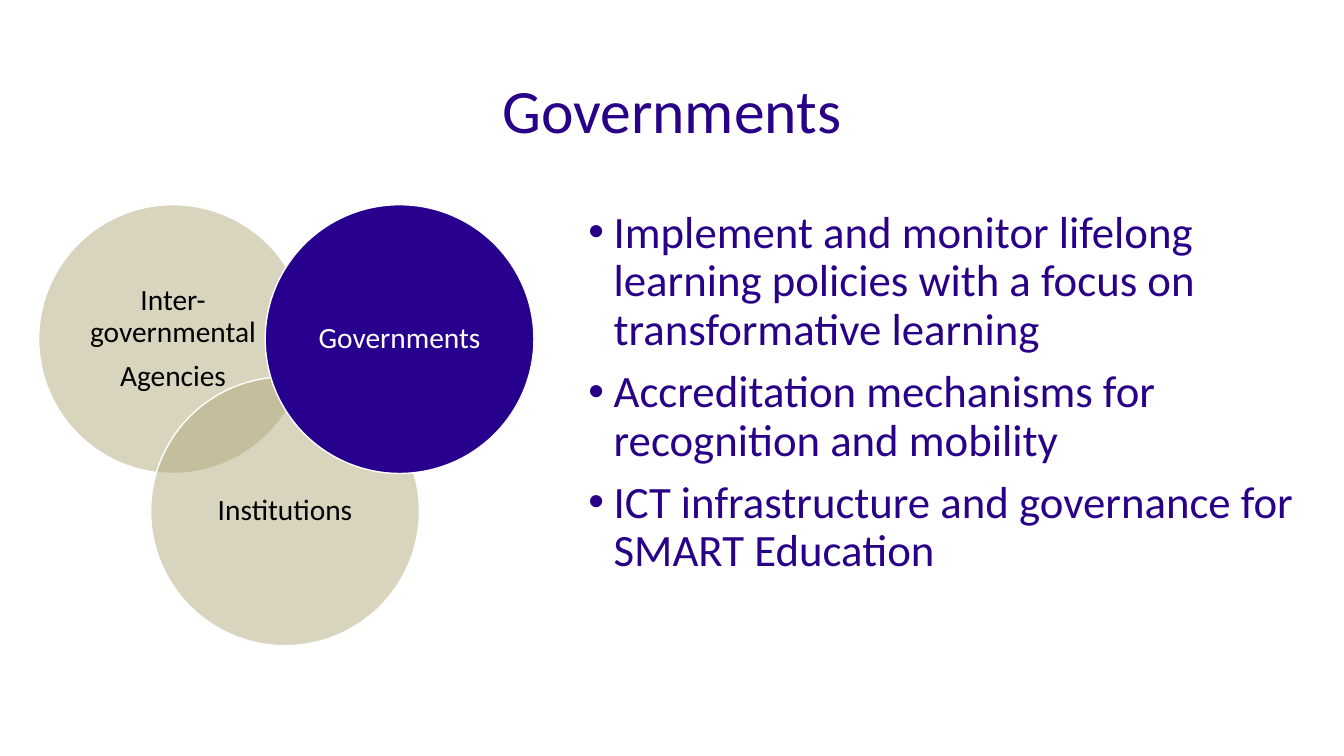
import pptx
import pptx.dml.color
import pptx.enum.shapes
import pptx.enum.text
import pptx.util
from lxml import etree
from pptx.oxml.ns import qn

Pt = pptx.util.Pt
INDIGO = pptx.dml.color.RGBColor(0x29, 0x00, 0x88)
DEEP_INDIGO = pptx.dml.color.RGBColor(0x27, 0x01, 0x8E)
SAND = pptx.dml.color.RGBColor(0xB3, 0xAA, 0x7E)
BLACK = pptx.dml.color.RGBColor(0x00, 0x00, 0x00)
WHITE = pptx.dml.color.RGBColor(0xFF, 0xFF, 0xFF)
CENTER = pptx.enum.text.PP_ALIGN.CENTER
MIDDLE = pptx.enum.text.MSO_ANCHOR.MIDDLE


def write_paragraphs(frame, texts, size, color, gap, alignment=None, bullet=None):
    frame.word_wrap = True
    for index, text in enumerate(texts):
        paragraph = frame.paragraphs[0] if index == 0 else frame.add_paragraph()
        paragraph.alignment = alignment
        paragraph.line_spacing = 0.9
        if index:
            paragraph.space_before = Pt(gap)
        if bullet:
            properties = paragraph._p.get_or_add_pPr()
            properties.set("marL", str(Pt(18)))
            properties.set("indent", str(Pt(-18)))
            bullet_font = etree.SubElement(properties, qn("a:buFont"))
            bullet_font.set("typeface", "Arial")
            etree.SubElement(properties, qn("a:buChar")).set("char", bullet)
        run = paragraph.add_run()
        run.text = text
        run.font.name = "Calibri"
        run.font.size = Pt(size)
        run.font.color.rgb = color


presentation = pptx.Presentation()
presentation.slide_width = Pt(960)
presentation.slide_height = Pt(540)
slide = presentation.slides.add_slide(presentation.slide_layouts[6])

title = slide.shapes.add_textbox(Pt(0), Pt(28.8), Pt(960), Pt(104.4))
title.text_frame.vertical_anchor = MIDDLE
write_paragraphs(title.text_frame, ["Governments"], 44, INDIGO, 0, CENTER)

body = slide.shapes.add_textbox(Pt(413.3), Pt(146.2), Pt(527.8), Pt(344.2))
actions = [
    "Implement and monitor lifelong learning policies with a focus on transformative learning",
    "Accreditation mechanisms for recognition and mobility",
    "ICT infrastructure and governance for SMART Education",
]
write_paragraphs(body.text_frame, actions, 32, INDIGO, 10, bullet="•")

DIAMETER = 192
circles = [
    (27.6, 146.2, SAND, 50, BLACK, ["Inter-governmental", "Agencies"]),
    (107.6, 269.2, SAND, 50, BLACK, ["Institutions"]),
    (189.4, 146.2, DEEP_INDIGO, 100, WHITE, ["Governments"]),
]
for left, top, fill_color, opacity, text_color, labels in circles:
    circle = slide.shapes.add_shape(
        pptx.enum.shapes.MSO_SHAPE.OVAL, Pt(left), Pt(top), Pt(DIAMETER), Pt(DIAMETER)
    )
    circle.shadow.inherit = False
    circle.fill.solid()
    circle.fill.fore_color.rgb = fill_color
    if opacity < 100:
        color_element = circle._element.spPr.find(qn("a:solidFill"))[0]
        etree.SubElement(color_element, qn("a:alpha")).set("val", str(opacity * 1000))
    circle.line.color.rgb = WHITE
    circle.line.width = Pt(1)
    frame = circle.text_frame
    frame.vertical_anchor = MIDDLE
    frame.margin_left = frame.margin_right = Pt(6.5)
    frame.margin_top = frame.margin_bottom = Pt(6.5)
    write_paragraphs(frame, labels, 21, text_color, 9, CENTER)

presentation.save("out.pptx")
